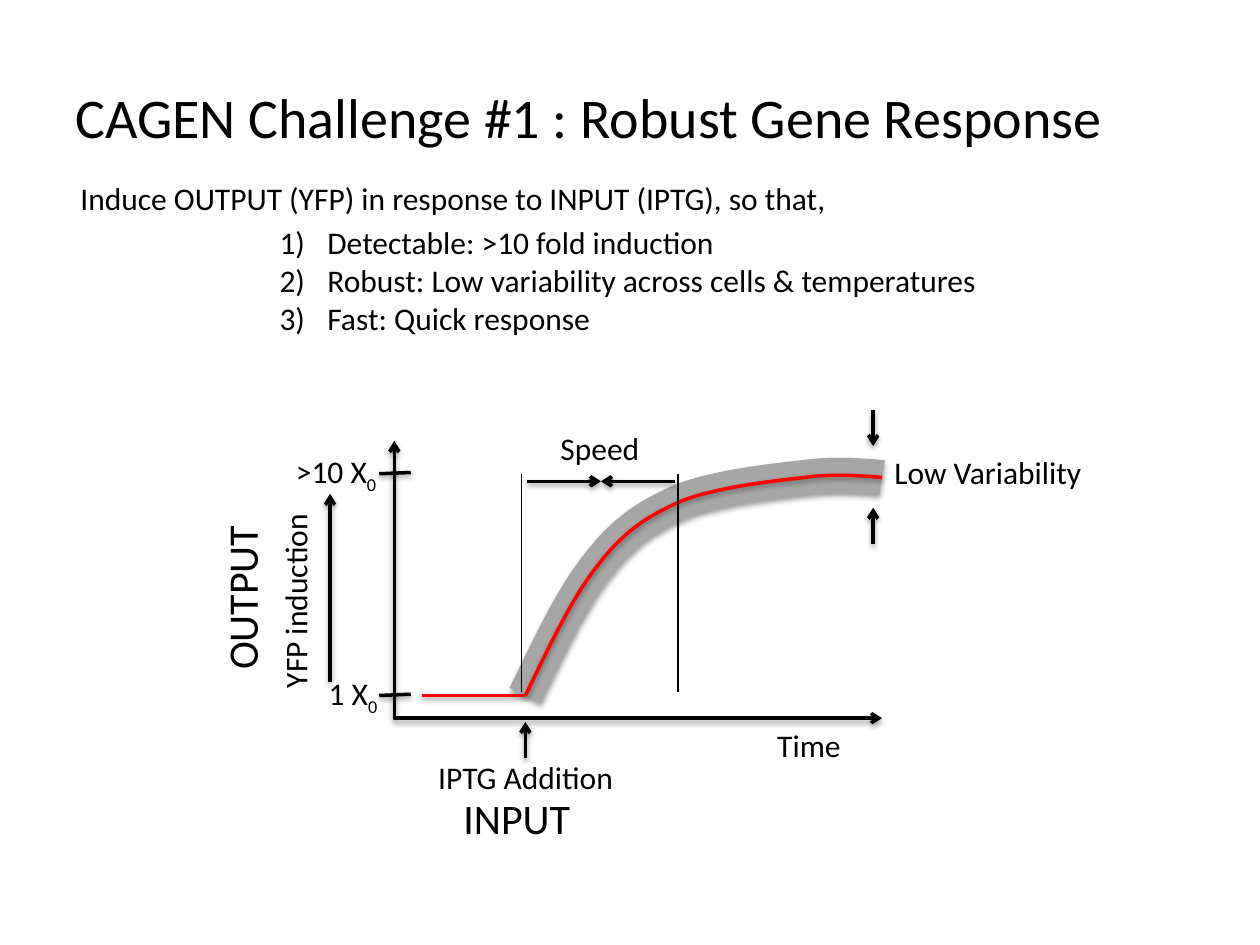
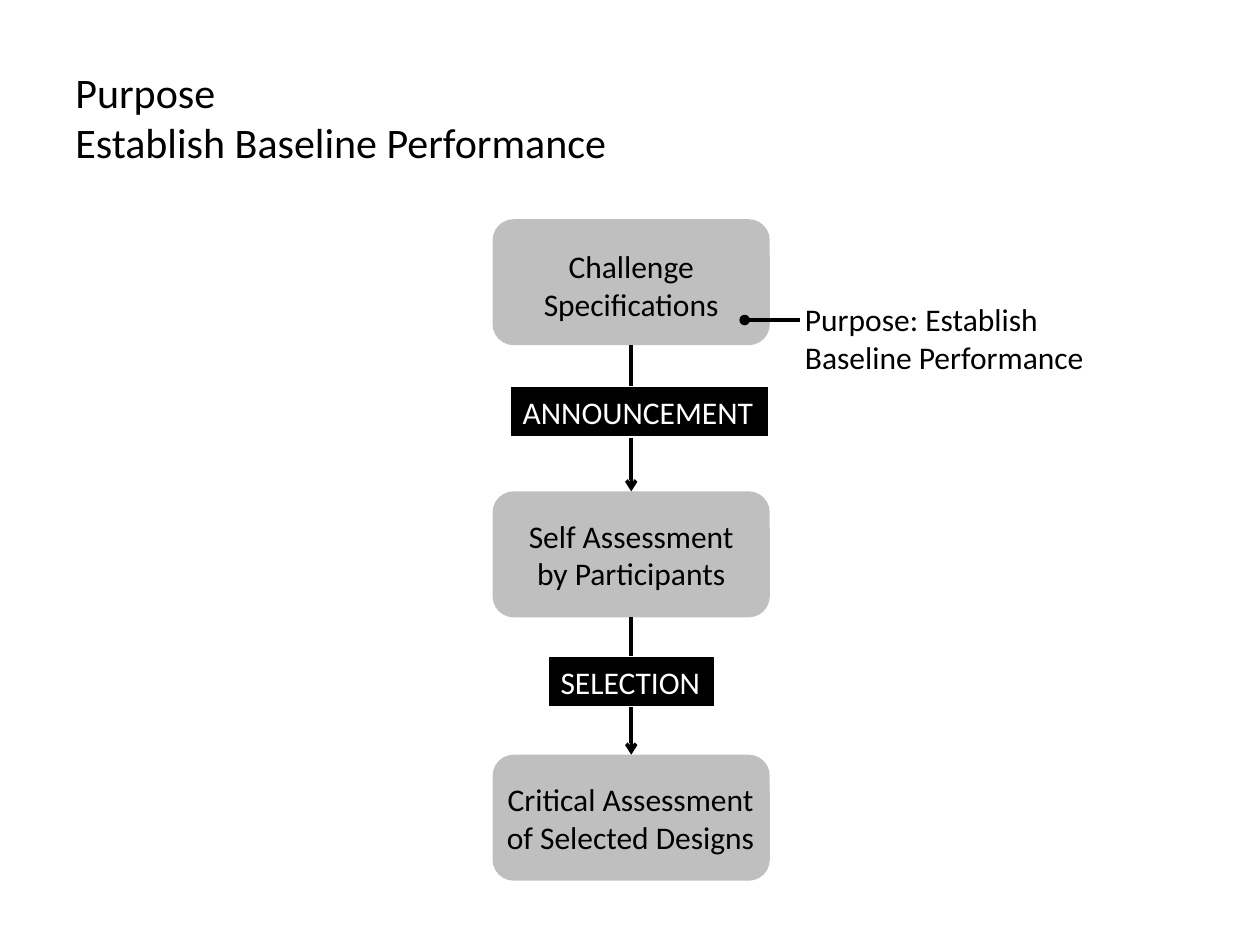
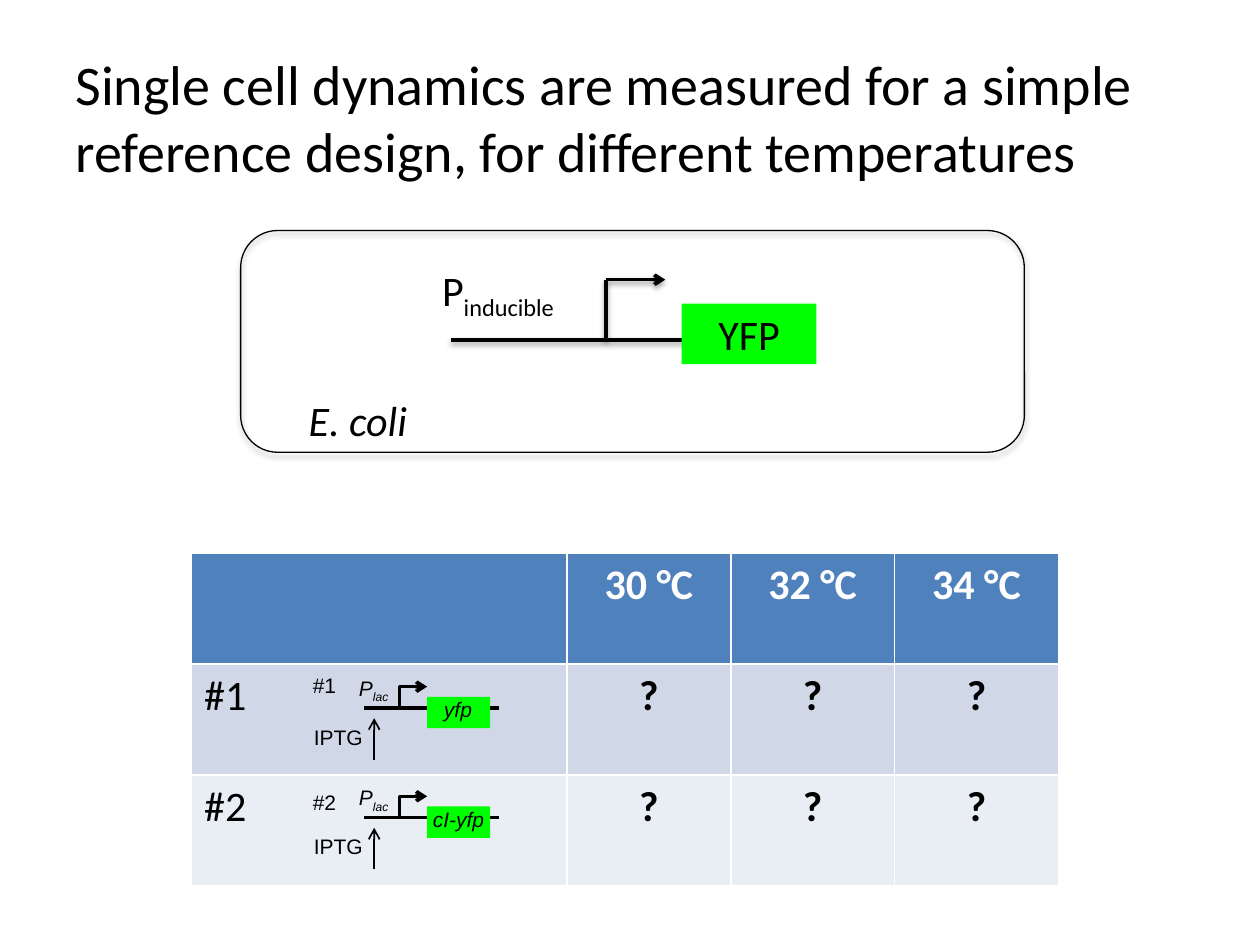
"""Build three slides on a robust gene response challenge."""
from lxml import etree
from pptx import Presentation
from pptx import util as u
from pptx.dml.color import RGBColor
from pptx.enum import shapes, text
from pptx.oxml.ns import qn

C = {"black": "000000", "white": "FFFFFF", "band": "A6A6A6", "curve": "FF0000",
     "step": "BFBFBF", "gene": "00FF00", "header": "4F81BD", "odd": "D0D8E8", "even": "E9EDF4"}
SHADOW = ('<a:effectLst xmlns:a="http://schemas.openxmlformats.org/drawingml/2006/main">'
          '<a:outerShdw blurRad="40000" dist="20000" dir="5400000" rotWithShape="0">'
          '<a:srgbClr val="000000"><a:alpha val="38000"/></a:srgbClr></a:outerShdw></a:effectLst>')
LEFT, CENTER = text.PP_ALIGN.LEFT, text.PP_ALIGN.CENTER
RECT, ROUND = shapes.MSO_SHAPE.RECTANGLE, shapes.MSO_SHAPE.ROUNDED_RECTANGLE
TITLE = (0.5, 0.3, 9, 1.25)


def add_text(s, box, paras, size=18, color="black", font="Calibri", align=LEFT, italic=False,
             wrap=False, middle=False, rot=0, shape=None, fill=None, line=None, numbered=False):
    """Add a box of paragraphs; every run after the first in a paragraph is a subscript."""
    box = [u.Inches(v) for v in box]
    sp = s.shapes.add_shape(shape, *box) if shape else s.shapes.add_textbox(*box)
    sp.rotation = rot
    if fill:
        sp.fill.solid()
        sp.fill.fore_color.rgb = RGBColor.from_string(C[fill])
    else:
        sp.fill.background()
    if line:
        sp.line.color.rgb = RGBColor.from_string(C[line])
        sp.line.width = u.Pt(0.75)
    else:
        sp.line.fill.background()
    sp.shadow.inherit = False
    tf = sp.text_frame
    tf.word_wrap = wrap
    tf.vertical_anchor = text.MSO_ANCHOR.MIDDLE if middle else text.MSO_ANCHOR.TOP
    for i, runs in enumerate(paras):
        p = tf.add_paragraph() if i else tf.paragraphs[0]
        p.alignment = align
        if numbered:
            pPr = p._p.get_or_add_pPr()
            pPr.set("marL", str(u.Inches(0.38)))
            pPr.set("indent", str(-u.Inches(0.38)))
            etree.SubElement(pPr, qn("a:buAutoNum"), type="arabicParenR")
        for j, words in enumerate(runs):
            r = p.add_run()
            r.text = words
            r.font.size, r.font.name, r.font.italic = u.Pt(size), font, italic
            r.font.color.rgb = RGBColor.from_string(C[color])
            if j:
                r._r.get_or_add_rPr().set("baseline", "-25000")
    return sp


def add_line(s, pts, color="black", width=2, head=None, tail=None, shadow=True):
    """Join two points with a connector, or more points with an open outline."""
    pts = [(u.Inches(x), u.Inches(y)) for x, y in pts]
    if len(pts) == 2:
        sp = s.shapes.add_connector(shapes.MSO_CONNECTOR.STRAIGHT, *pts[0], *pts[1])
    else:
        fb = s.shapes.build_freeform(*pts[0])
        fb.add_line_segments(pts[1:], close=False)
        sp = fb.convert_to_shape()
        sp.fill.background()
    sp.line.color.rgb = RGBColor.from_string(C[color])
    sp.line.width = u.Pt(width)
    ln = sp.line._get_or_add_ln()
    for tag, end in (("a:headEnd", head), ("a:tailEnd", tail)):
        if end:
            etree.SubElement(ln, qn(tag), type=end)
    effects = etree.fromstring(SHADOW)
    if not shadow:
        effects.remove(effects[0])
    sp._element.spPr.append(effects)


prs = Presentation()
prs.slide_width, prs.slide_height = u.Inches(10), u.Inches(7.5)

s = prs.slides.add_slide(prs.slide_layouts[6])
knots = [(4.17, 5.52), (4.36, 5.13), (4.54, 4.74), (4.75, 4.48), (4.95, 4.22), (5.13, 4.1),
         (5.4, 3.98), (5.67, 3.87), (6.11, 3.82), (6.38, 3.79), (6.64, 3.75), (7, 3.79), (7, 3.79)]
response = [knots[0]]
for k in range(0, 12, 3):
    for step in range(1, 17):
        t = step / 16
        weights = ((1 - t) ** 3, 3 * t * (1 - t) ** 2, 3 * t * t * (1 - t), t ** 3)
        response.append(tuple(sum(w * pt[axis] for w, pt in zip(weights, knots[k:k + 4]))
                              for axis in (0, 1)))
add_line(s, response, "band", 20)
add_text(s, TITLE, [["CAGEN Challenge #1 : Robust Gene Response"]], 32, wrap=True, middle=True)
add_text(s, (0.54, 1.37, 6.14, 0.4),
         [["Induce OUTPUT (YFP) in response to INPUT (IPTG), so that,"]])
add_text(s, (2.12, 1.72, 5.78, 1.01),
         [["Detectable: >10 fold induction"],
          ["Robust: Low variability across cells & temperatures"],
          ["Fast: Quick response"]], numbered=True)
add_line(s, response, "curve")
add_line(s, [(4.17, 5.52), (3.35, 5.52)], "curve")
add_line(s, [(3.13, 3.5), (3.13, 5.7), (7, 5.7)], head="arrow", tail="arrow")
for y in (3.75, 5.51):
    add_line(s, [(3.26, y), (3.01, y + 0.01)])
for x in (4.14, 5.38):
    add_line(s, [(x, 3.76), (x, 5.49)], width=1, shadow=False)
for start, end in (((4.17, 6.02), (4.17, 5.73)), ((4.18, 3.82), (4.77, 3.82)),
                   ((5.36, 3.82), (4.77, 3.82)), ((6.93, 4.32), (6.93, 4.03)),
                   ((6.93, 3.25), (6.93, 3.54)), ((2.62, 5.41), (2.62, 3.92))):
    add_line(s, [start, end], tail="arrow")
for box, runs, size, rot in (((6.07, 5.71, 0.71, 0.4), ["Time"], 18, 0),
                             ((3.38, 5.97, 1.6, 0.4), ["IPTG Addition"], 18, 0),
                             ((3.58, 6.24, 1.06, 0.5), ["INPUT"], 24, 0),
                             ((1.54, 4.56, 1.6, 0.4), ["YFP induction"], 18, 270),
                             ((1.23, 4.48, 1.37, 0.5), ["OUTPUT"], 24, 270),
                             ((2.51, 5.3, 0.6, 0.4), ["1 X", "0"], 18, 0),
                             ((2.25, 3.54, 0.86, 0.4), [">10 X", "0"], 18, 0),
                             ((4.35, 3.36, 0.83, 0.4), ["Speed"], 18, 0),
                             ((7, 3.55, 1.7, 0.4), ["Low Variability"], 18, 0)):
    add_text(s, box, [runs], size, rot=rot)

s = prs.slides.add_slide(prs.slide_layouts[6])
add_text(s, TITLE, [["Purpose"], ["Establish Baseline Performance"]], 24, wrap=True, middle=True)
for y, x, w, dy, label in ((1.74, 4.11, 1.8, 0.17, "Challenge Specifications"),
                           (3.9, 3.98, 2.06, 0.15, "Self Assessment by Participants"),
                           (5.99, 3.81, 2.39, 0.15, "Critical Assessment of Selected Designs")):
    add_text(s, (3.91, y, 2.2, 1), [], shape=ROUND, fill="step")
    add_text(s, (x, y + dy, w, 0.71), [[label]], align=CENTER, wrap=True)
for y1, y2 in ((2.74, 3.9), (4.9, 5.99)):
    add_line(s, [(5.01, y1), (5.01, y2)], tail="arrow", shadow=False)
add_line(s, [(5.91, 2.54), (6.35, 2.54)], head="oval", shadow=False)
add_text(s, (6.29, 2.33, 2.61, 0.71), [["Purpose: Establish Baseline Performance"]], wrap=True)
for box, label in (((4.05, 3.07, 2.05, 0.4), "ANNOUNCEMENT"),
                   ((4.35, 5.21, 1.32, 0.4), "SELECTION")):
    add_text(s, box, [[label]], color="white", shape=RECT, fill="black", line="white")

s = prs.slides.add_slide(prs.slide_layouts[6])
add_text(s, TITLE, [["Single cell dynamics are measured for a simple reference design, "
                     "for different temperatures"]], 32, wrap=True, middle=True)
add_line(s, [(3.58, 2.7), (6.2, 2.7)])
add_line(s, [(4.81, 2.22), (4.81, 2.7)])
add_line(s, [(4.81, 2.22), (5.28, 2.22)], tail="arrow")
add_text(s, (5.41, 2.41, 1.07, 0.48), [["YFP"]], 24, align=CENTER, wrap=True, middle=True,
         shape=RECT, fill="gene")
add_text(s, (3.41, 2.05, 1.21, 0.5), [["P", "inducible"]], 24)
cell = add_text(s, (1.91, 1.83, 6.22, 1.76), [], shape=ROUND, line="black")
spPr = cell._element.spPr
spPr.replace(spPr.find(qn("a:effectLst")), etree.fromstring(SHADOW))
add_text(s, (2.35, 3.08, 1.05, 0.5), [["E. coli"]], 24, italic=True)

rows = [["", "30 °C", "32 °C", "34 °C"], ["#1", "?", "?", "?"], ["#2", "?", "?", "?"]]
tb = s.shapes.add_table(3, 4, *[u.Inches(v) for v in (1.52, 4.39, 6.88, 2.64)]).table
for col, w in zip(tb.columns, (2.98, 1.3, 1.3, 1.3)):
    col.width = u.Inches(w)
for i, (row, fill) in enumerate(zip(rows, ("header", "odd", "even"))):
    for j, words in enumerate(row):
        c = tb.cell(i, j)
        c.fill.solid()
        c.fill.fore_color.rgb = RGBColor.from_string(C[fill])
        if words:
            p = c.text_frame.paragraphs[0]
            p.alignment = CENTER if j else LEFT
            r = p.add_run()
            r.text = words
            r.font.size, r.font.name, r.font.bold = u.Pt(24), "Calibri", j > 0
            r.font.color.rgb = RGBColor.from_string(C["black" if i else "white"])

for y, tag, tag_y, gene, x, w in ((5.62, "#1", 5.29, "yfp", 3.4, 0.47),
                                  (6.49, "#2", 6.22, "cI-yfp", 3.31, 0.66)):
    add_line(s, [(2.89, y), (3.96, y)], shadow=False)
    add_line(s, [(3.17, y), (3.17, y - 0.17), (3.39, y - 0.17)], tail="arrow", shadow=False)
    add_text(s, (3.39, y - 0.09, 0.5, 0.25), [], shape=RECT, fill="gene")
    add_line(s, [(2.97, y + 0.41), (2.97, y + 0.08)], width=1, tail="arrow", shadow=False)
    for box, runs, italic in (((x, y - 0.14, w, 0.3), [gene], True),
                              ((2.72, y - 0.31, 0.49, 0.3), ["P", "lac"], True),
                              ((2.39, y + 0.08, 0.59, 0.3), ["IPTG"], False),
                              ((2.38, tag_y, 0.39, 0.3), [tag], False)):
        add_text(s, box, [runs], 12, font="Arial", align=CENTER, italic=italic)

prs.save("out.pptx")
